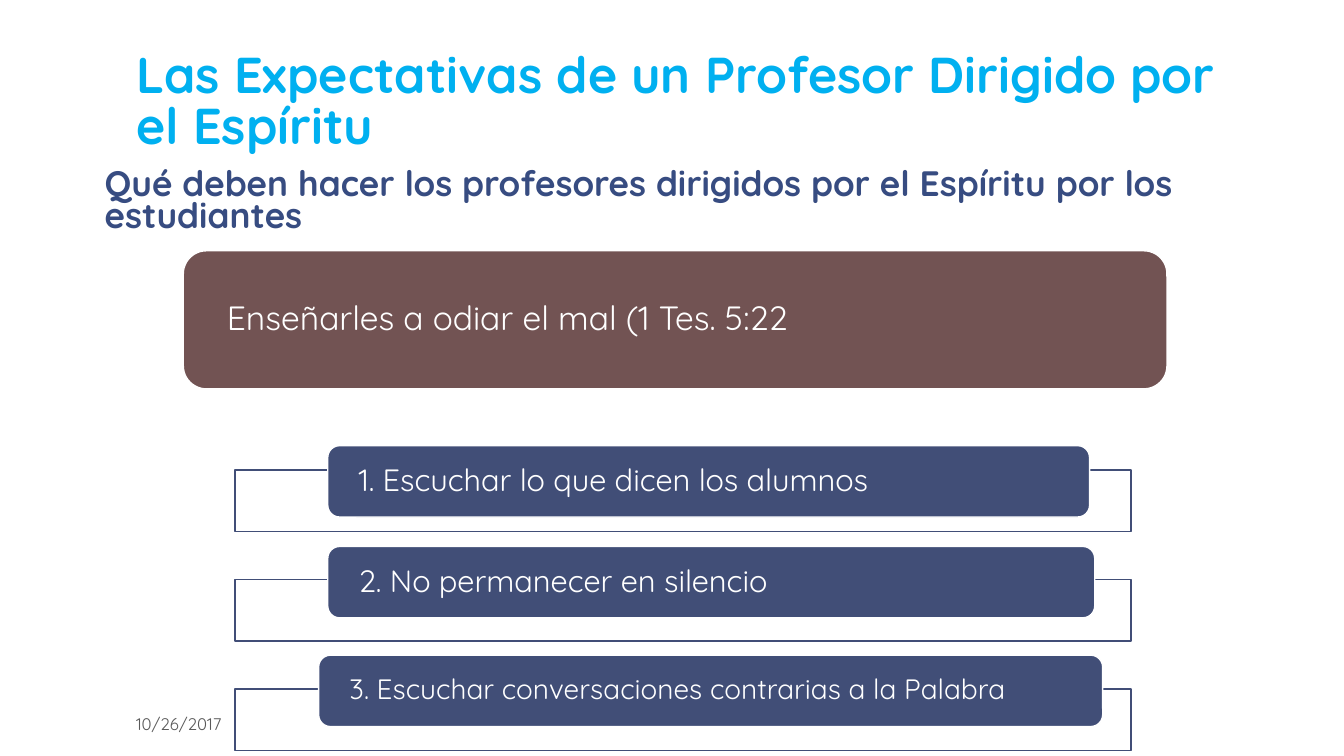
from pptx import Presentation
from pptx.dml.color import RGBColor
from pptx.enum.shapes import MSO_SHAPE as Shape
from pptx.enum.text import MSO_ANCHOR as Anchor
from pptx.util import Cm, Pt

FONT = "Quicksand"
COLORS = {
    "title": "00B0F0",
    "subtitle": "374C81",
    "theme": "725353",
    "action": "414E77",
    "date": "595959",
    "white": "FFFFFF",
}

# text, left, top, width (cm), font size
ACTIONS = [
    ("1. Escuchar lo que dicen los alumnos", 8.26, 11.23, 19.2, 22),
    ("2. No permanecer en silencio", 8.26, 13.77, 19.33, 22),
    ("3. Escuchar conversaciones contrarias a la Palabra", 8.03, 16.51, 19.76, 20),
]
ACTION_HEIGHT = 1.8
FRAME_LEFT, FRAME_TOP, FRAME_WIDTH, FRAME_HEIGHT = 5.92, 11.84, 22.58, 1.55
FRAME_PITCH = 2.76


def rgb(name):
    return RGBColor.from_string(COLORS[name])


def write(frame, text, size, color, anchor, inset, spacing=1.0, bold=False):
    """Fill a text frame with one left-aligned run; inset is (side, top) in cm."""
    side, top = inset
    frame.word_wrap = True
    frame.vertical_anchor = anchor
    frame.margin_left = frame.margin_right = Cm(side)
    frame.margin_top = frame.margin_bottom = Cm(top)
    paragraph = frame.paragraphs[0]
    paragraph.line_spacing = spacing
    run = paragraph.add_run()
    run.text = text
    run.font.name = FONT
    run.font.size = Pt(size)
    run.font.bold = bold
    run.font.color.rgb = rgb(color)


def add_text(slide, box, text, size, color, anchor, **style):
    label = slide.shapes.add_textbox(*map(Cm, box))
    write(label.text_frame, text, size, color, anchor, (0.33, 0.18), **style)


def add_box(slide, kind, box, fill, line):
    shape = slide.shapes.add_shape(kind, *map(Cm, box))
    shape.shadow.inherit = False
    shape.fill.solid()
    shape.fill.fore_color.rgb = rgb(fill)
    shape.line.color.rgb = rgb(line)
    shape.line.width = Pt(1)
    return shape


def add_banner(slide, box, text, size, fill, side):
    banner = add_box(slide, Shape.ROUNDED_RECTANGLE, box, fill, "white")
    paragraph = banner.text_frame.paragraphs[0]
    paragraph.alignment = 1
    write(banner.text_frame, text, size, "white", Anchor.MIDDLE, (side, 0), spacing=0.9)


def main():
    deck = Presentation()
    deck.slide_width, deck.slide_height = Cm(33.87), Cm(19.05)
    slide = deck.slides.add_slide(deck.slide_layouts[6])

    add_text(slide, (3.1, 0.2, 28.22, 3.89),
             "Las Expectativas de un Profesor Dirigido por el Espíritu",
             36, "title", Anchor.BOTTOM, spacing=0.85, bold=True)
    add_text(slide, (2.31, 4.14, 30.28, 1.98),
             "Qué deben hacer los profesores dirigidos por el Espíritu por los estudiantes",
             25.2, "subtitle", Anchor.TOP, spacing=0.75, bold=True)
    add_banner(slide, (4.62, 6.32, 24.79, 3.48),
               "Enseñarles a odiar el mal (1 Tes. 5:22", 24, "theme", 0.93)

    for row, (text, left, top, width, size) in enumerate(ACTIONS):
        frame_top = FRAME_TOP + row * FRAME_PITCH
        add_box(slide, Shape.RECTANGLE,
                (FRAME_LEFT, frame_top, FRAME_WIDTH, FRAME_HEIGHT), "white", "action")
        add_banner(slide, (left, top, width, ACTION_HEIGHT), text, size, "action", 0.69)

    add_text(slide, (3.1, 17.78, 7.62, 0.89), "10/26/2017", 12, "date", Anchor.BOTTOM)
    deck.save("out.pptx")


if __name__ == "__main__":
    main()
